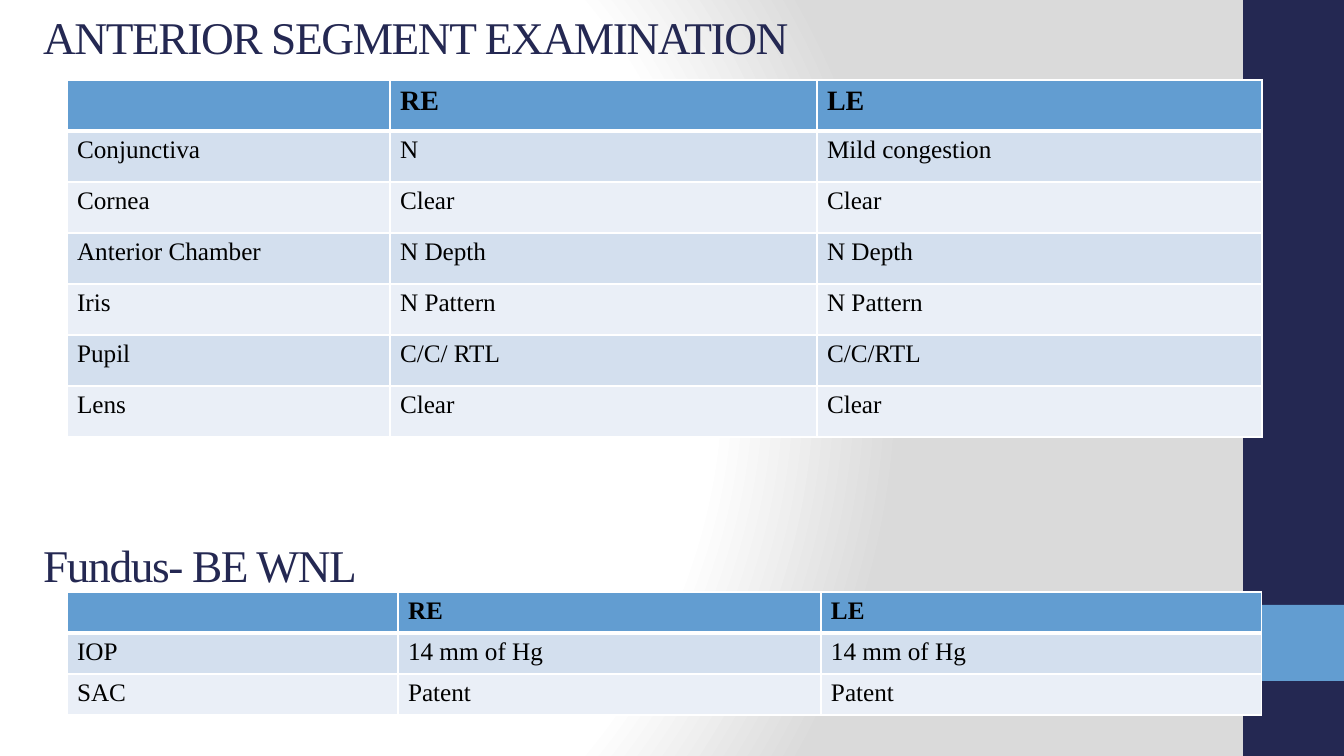
from dataclasses import dataclass

from lxml import etree
from pptx import Presentation
from pptx import util as u
from pptx.dml.color import RGBColor
from pptx.enum import shapes, text
from pptx.oxml import parse_xml

EMU_PER_PX = 12192000 / 1344
DRAWING_NS = "http://schemas.openxmlformats.org/drawingml/2006/main"
SLIDE_NS = "http://schemas.openxmlformats.org/presentationml/2006/main"


@dataclass(frozen=True)
class Theme:
    """Colours, font and type sizes of the slide."""

    font: str = "Times New Roman"
    navy: str = "242852"
    blue: str = "629DD1"
    band_dark: str = "D3DFEE"
    band_light: str = "EAEFF7"
    white: str = "FFFFFF"
    grey: str = "DADADA"
    black: str = "000000"
    title_size: float = 32.4
    large_header_size: int = 20
    body_size: int = 18


THEME = Theme()

EXAMINATION = [
    ("", "RE", "LE"),
    ("Conjunctiva", "N", "Mild congestion"),
    ("Cornea", "Clear", "Clear"),
    ("Anterior Chamber", "N Depth", "N Depth"),
    ("Iris", "N Pattern", "N Pattern"),
    ("Pupil", "C/C/ RTL", "C/C/RTL"),
    ("Lens", "Clear", "Clear"),
]
PRESSURE = [
    ("", "RE", "LE"),
    ("IOP", "14 mm of Hg", "14 mm of Hg"),
    ("SAC", "Patent", "Patent"),
]


def px(length):
    """Turn pixels into EMU."""
    return u.Emu(round(length * EMU_PER_PX))


def style_font(font, size, colour, bold=False):
    """Set the typeface, size, colour and weight of a font."""
    font.name = THEME.font
    font.size = u.Pt(size)
    font.bold = bold
    font.color.rgb = RGBColor.from_string(colour)


def set_background(page):
    """Fill the page with a circular white-to-grey gradient."""
    stops = [(0, THEME.white), (75, THEME.white), (100, THEME.grey)]
    stop_xml = "".join(
        f'<a:gs pos="{position * 1000}"><a:srgbClr val="{colour}"/></a:gs>'
        for position, colour in stops
    )
    background = parse_xml(
        f'<p:bg xmlns:p="{SLIDE_NS}" xmlns:a="{DRAWING_NS}"><p:bgPr>'
        f'<a:gradFill rotWithShape="1"><a:gsLst>{stop_xml}</a:gsLst>'
        '<a:path path="circle">'
        '<a:fillToRect l="20000" t="50000" r="100000" b="50000"/>'
        "</a:path></a:gradFill><a:effectLst/></p:bgPr></p:bg>"
    )
    page.element.cSld.insert(0, background)


def add_bar(page, left, top, width, height, colour):
    """Add a plain filled rectangle."""
    bar = page.shapes.add_shape(
        shapes.MSO_SHAPE.RECTANGLE, px(left), px(top), px(width), px(height)
    )
    bar.shadow.inherit = False
    bar.fill.solid()
    bar.fill.fore_color.rgb = RGBColor.from_string(colour)
    bar.line.fill.background()


def set_titles(page, lines, gap):
    """Write the headings in the title placeholder, gap points apart."""
    box = page.shapes.title
    box.left, box.top, box.width, box.height = px(33), px(9), px(1289), px(720)
    frame = box.text_frame
    frame.text = "\n".join(lines)
    frame.auto_size = text.MSO_AUTO_SIZE.NONE
    frame.vertical_anchor = text.MSO_ANCHOR.TOP
    frame.margin_top = 0
    for index, para in enumerate(frame.paragraphs):
        para.alignment = text.PP_ALIGN.LEFT
        para.line_spacing = 1.0
        para.space_before = u.Pt(gap if index else 0)
        for span in para.runs:
            style_font(span.font, THEME.title_size, THEME.navy)
            span.font._element.set("spc", "-100")


def set_borders(cell, top, bottom):
    """Draw white cell borders, with top and bottom widths in points."""
    properties = cell._tc.get_or_add_tcPr()
    for side, width in (("L", 1), ("R", 1), ("T", top), ("B", bottom)):
        line = etree.SubElement(
            properties, f"{{{DRAWING_NS}}}ln{side}", w=str(u.Pt(width))
        )
        fill = etree.SubElement(line, f"{{{DRAWING_NS}}}solidFill")
        etree.SubElement(fill, f"{{{DRAWING_NS}}}srgbClr", val=THEME.white)


def add_banded_table(page, rows, top, column_widths, row_height, header_size):
    """Add a table with a blue header and alternating row colours."""
    frame = page.shapes.add_table(
        len(rows), len(column_widths), px(67), px(top),
        px(sum(column_widths)), px(row_height * len(rows)),
    )
    table = frame.table
    for column, width in zip(table.columns, column_widths):
        column.width = px(width)
    for r, values in enumerate(rows):
        table.rows[r].height = px(row_height)
        header = r == 0
        band = THEME.band_dark if r % 2 else THEME.band_light
        for c, value in enumerate(values):
            cell = table.cell(r, c)
            set_borders(cell, 3 if r == 1 else 1, 3 if header else 1)
            cell.fill.solid()
            cell.fill.fore_color.rgb = RGBColor.from_string(
                THEME.blue if header else band
            )
            cell.text_frame.text = value
            size = header_size if header else THEME.body_size
            for span in cell.text_frame.paragraphs[0].runs:
                style_font(span.font, size, THEME.black, header)


def main():
    """Build the eye examination slide."""
    deck = Presentation()
    deck.slide_width, deck.slide_height = px(1344), px(756)
    page = deck.slides.add_slide(deck.slide_layouts.get_by_name("Title Only"))
    set_background(page)
    add_bar(page, 1243, 0, 101, 756, THEME.navy)
    add_bar(page, 1243, 605, 101, 76, THEME.blue)
    set_titles(page, ["ANTERIOR SEGMENT EXAMINATION", "Fundus- BE WNL"], 338)
    add_banded_table(
        page, EXAMINATION, 80, (323, 427, 445), 51, THEME.large_header_size
    )
    add_banded_table(page, PRESSURE, 592, (331, 423, 441), 41, THEME.body_size)
    deck.save("out.pptx")


if __name__ == "__main__":
    main()
